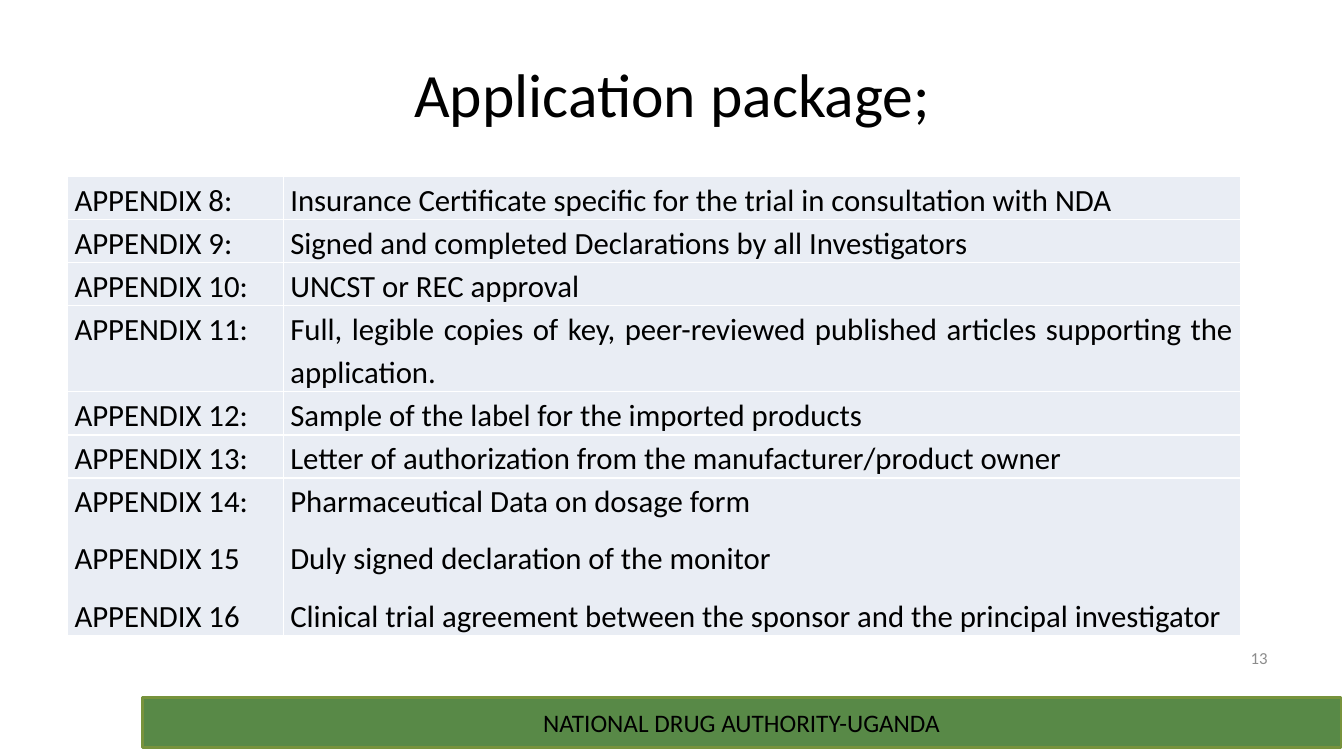
from pptx import Presentation
from pptx.dml.color import RGBColor
from pptx.enum.shapes import MSO_SHAPE
from pptx.enum.text import MSO_ANCHOR, PP_ALIGN
from pptx.oxml import parse_xml
from pptx.oxml.ns import nsdecls
from pptx.util import Inches, Pt
from dataclasses import dataclass

# Content
TITLE = "Application package;"
FOOTER = "NATIONAL DRUG AUTHORITY-UGANDA"
PAGE = "13"
ROWS = [
    (["APPENDIX 8:"], ["Insurance Certificate specific for the trial in consultation with NDA"]),
    (["APPENDIX 9:"], ["Signed and completed Declarations by all Investigators"]),
    (["APPENDIX 10:"], ["UNCST or REC approval"]),
    (["APPENDIX 11:"], ["Full, legible copies of key, peer-reviewed published articles "
                        "supporting the application."]),
    (["APPENDIX 12:"], ["Sample of the label for the imported products"]),
    (["APPENDIX 13:"], ["Letter of authorization from the manufacturer/product owner"]),
    (["APPENDIX 14:", "APPENDIX 15", "APPENDIX 16"],
     ["Pharmaceutical Data on dosage form",
      "Duly signed declaration of the monitor",
      "Clinical trial agreement between the sponsor and the principal investigator"]),
]
COLS = [2.14, 9.49]
LINE, GAP = 0.42, 0.14  # height of a text line, space between paragraphs
WRAPS = {3: 2}  # row index: lines of text


@dataclass(frozen=True)
class Theme:
    font: str = "Calibri"
    ink: str = "000000"
    grey: str = "8C8C8C"
    green: str = "588947"
    edge: str = "77933C"
    cell: str = "E9EDF4"
    rule: str = "FFFFFF"
    head: int = 44
    body: int = 22
    foot: int = 18
    note: int = 12


THEME = Theme()


def color(code):
    return RGBColor.from_string(code)


def write(frame, lines, size, ink=THEME.ink, align=PP_ALIGN.CENTER,
          spacing=None, after=None):
    """Fill a text frame with one paragraph per line."""
    frame.word_wrap = True
    for index, line in enumerate(lines):
        para = frame.paragraphs[0] if index == 0 else frame.add_paragraph()
        para.alignment = align
        if spacing:
            para.line_spacing = spacing
        if after:
            para.space_after = Pt(after)
        run = para.add_run()
        run.text = line
        run.font.name = THEME.font
        run.font.size = Pt(size)
        run.font.color.rgb = color(ink)


def border(cell):
    """Draw a thin rule on all four sides of a cell."""
    props = cell._tc.get_or_add_tcPr()
    for side in ("lnL", "lnR", "lnT", "lnB"):
        props.append(parse_xml(
            f'<a:{side} {nsdecls("a")} w="12700"><a:solidFill>'
            f'<a:srgbClr val="{THEME.rule}"/></a:solidFill></a:{side}>'))


def place(shape, left, top, width, height):
    shape.left, shape.top = Inches(left), Inches(top)
    shape.width, shape.height = Inches(width), Inches(height)


def main():
    deck = Presentation()
    deck.slide_width, deck.slide_height = Inches(13.33), Inches(7.5)
    slide = deck.slides.add_slide(deck.slide_layouts[5])
    shapes = slide.shapes

    # Footer band
    band = shapes.add_shape(MSO_SHAPE.RECTANGLE, Inches(1.41), Inches(6.92),
                            Inches(11.89), Inches(0.5))
    band.shadow.inherit = False
    band.fill.solid()
    band.fill.fore_color.rgb = color(THEME.green)
    band.line.color.rgb = color(THEME.edge)
    band.line.width = Pt(2)
    band.text_frame.vertical_anchor = MSO_ANCHOR.MIDDLE
    write(band.text_frame, [FOOTER], THEME.foot)

    # Title
    place(shapes.title, 0.67, 0.3, 12, 1.25)
    shapes.title.text_frame.vertical_anchor = MSO_ANCHOR.MIDDLE
    write(shapes.title.text_frame, [TITLE], THEME.head)

    # Appendix table
    heights = []
    for index, (names, _) in enumerate(ROWS):
        count = WRAPS.get(index, len(names))
        heights.append(count * LINE + (len(names) - 1) * GAP)
    table = shapes.add_table(len(ROWS), len(COLS), Inches(0.67), Inches(1.75),
                             Inches(sum(COLS)), Inches(sum(heights))).table
    table.first_row = table.horz_banding = False
    for col, width in zip(table.columns, COLS):
        col.width = Inches(width)
    for row, height, texts in zip(table.rows, heights, ROWS):
        row.height = Inches(height)
        for cell, lines in zip(row.cells, texts):
            border(cell)
            cell.fill.solid()
            cell.fill.fore_color.rgb = color(THEME.cell)
            cell.margin_left = cell.margin_right = Inches(0.07)
            cell.margin_top = cell.margin_bottom = 0
            write(cell.text_frame, lines, THEME.body, align=PP_ALIGN.JUSTIFY,
                  spacing=1.15, after=10)

    # Page number
    page = shapes.add_textbox(Inches(9.56), Inches(6.33), Inches(3.11), Inches(0.4))
    page.text_frame.vertical_anchor = MSO_ANCHOR.MIDDLE
    write(page.text_frame, [PAGE], THEME.note, ink=THEME.grey, align=PP_ALIGN.RIGHT)

    deck.save("out.pptx")


if __name__ == "__main__":
    main()
